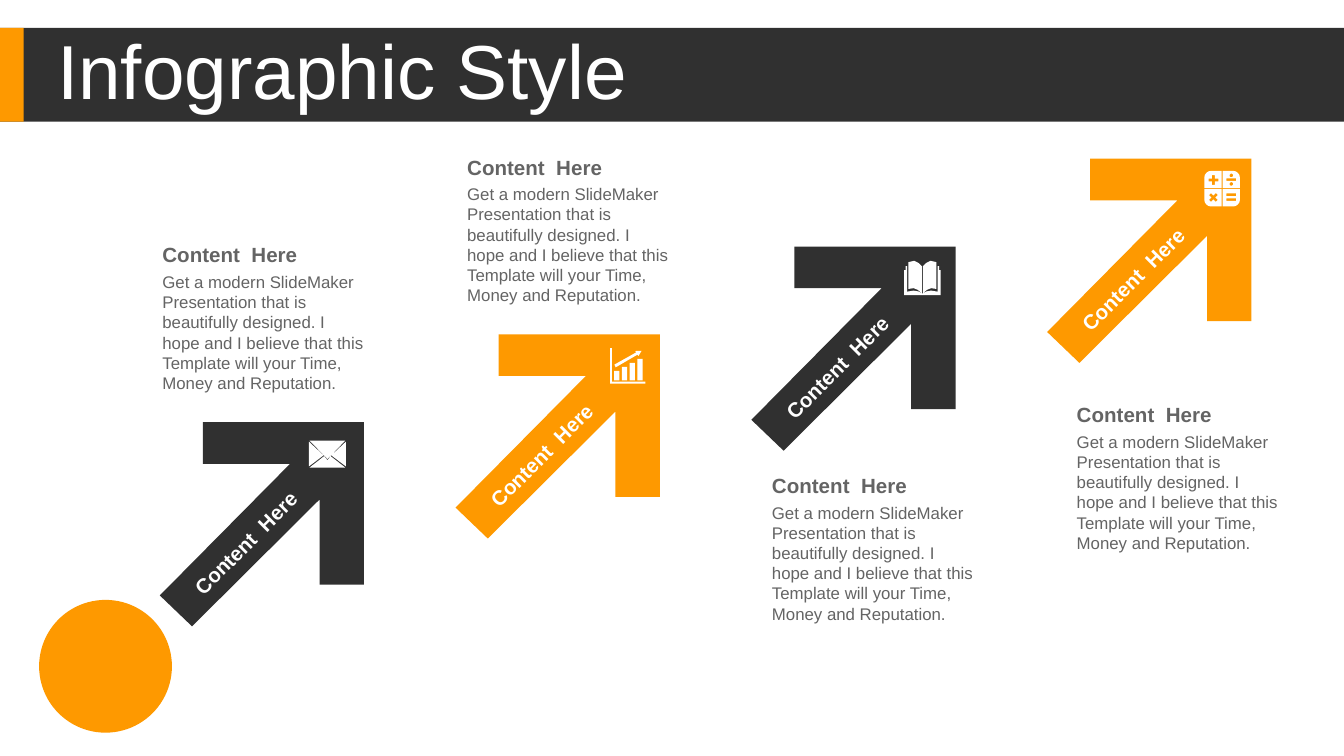
from pptx import Presentation
from pptx import util as u
from pptx.dml import color
from pptx.enum import shapes, text

DARK, ORANGE, WHITE, GREY = "303030", "FE9900", "FFFFFF", "646464"
HEADING = "Content  Here"
BODY = ("Get a modern SlideMaker Presentation that is beautifully designed. "
        "I hope and I believe that this Template will your Time, "
        "Money and Reputation.")

ARROW = [[(32, 0), (152, 0), (152, 121), (119, 121), (119, 57.5),
          (24, 152), (0, 129), (97, 31), (32, 31)]]


def rgb(value):
    return color.RGBColor.from_string(value)


def box(left, top, right, bottom):
    return [(left, top), (right, top), (right, bottom), (left, bottom)]


def mirror(points, width):
    return [(width - x, y) for x, y in points]


def flip(points, height):
    return [(x, height - y) for x, y in points]


def cross(x, y, arm, half):
    return [(x - half, y - arm), (x + half, y - arm), (x + half, y - half),
            (x + arm, y - half), (x + arm, y + half), (x + half, y + half),
            (x + half, y + arm), (x - half, y + arm), (x - half, y + half),
            (x - arm, y + half), (x - arm, y - half), (x - half, y - half)]


def turn(points, x, y):
    return [(x + (a - x - b + y) * 0.7, y + (a - x + b - y) * 0.7)
            for a, b in points]


def dot(x, y):
    return [(x + a, y + b) for a, b in
            [(-1.3, -0.5), (-0.5, -1.3), (0.5, -1.3), (1.3, -0.5),
             (1.3, 0.5), (0.5, 1.3), (-0.5, 1.3), (-1.3, 0.5)]]


def envelope():
    side = [(0, 0.8), (10.8, 11), (0, 19.2)]
    return [[(0.5, 0), (27, 0), (13.75, 13.7)], side, mirror(side, 27.5),
            [(0.5, 20), (11.3, 11.6), (13.75, 14.5), (16.2, 11.6), (27, 20)]]


def bar_chart():
    bars = [box(3 + 5.8 * i, top, 6.9 + 5.8 * i, 24)
            for i, top in enumerate((17, 14, 11, 8))]
    axes = [(0, 0), (1.4, 0), (1.4, 25), (26.2, 25), (26.2, 26.5), (0, 26.5)]
    trend = [(18.8, 2.2), (23.5, 2), (21.2, 5.8), (20.4, 4.9),
             (4.2, 14.3), (3.2, 12.3), (19.3, 3.3)]
    return bars + [axes, trend]


def book():
    page = [(13.1, 4), (10.5, 1.5), (7.5, 0), (3, 1), (3, 21),
            (7, 20.4), (10, 21.6), (13.1, 24)]
    cover = [(2.2, 4), (1, 4), (1, 7), (0, 7), (0, 25.5), (13.5, 25.5),
             (13.5, 24.4), (10.5, 22.8), (7, 22.2), (2.2, 23)]
    return [page, mirror(page, 27), cover, mirror(cover, 27)]


def calculator():
    panel = [(0, 12.9), (0, 5), (0.4, 3), (1.5, 1.5), (3, 0.4),
             (5, 0), (12.9, 0), (12.9, 12.9)]
    right = mirror(panel, 26.5)
    panels = [panel, right, flip(panel, 26.5), flip(right, 26.5)]
    signs = [cross(6.8, 6.8, 3.6, 1.1),
             turn(cross(6.8, 19.8, 3.6, 1.1), 6.8, 19.8),
             box(16.5, 5.6, 23.7, 7.5), dot(20.1, 3.4), dot(20.1, 9.7),
             box(16.5, 16.8, 23.7, 18.8), box(16.5, 20.4, 23.7, 22.4)]
    return panels + signs


def paint(shape, fill):
    shape.shadow.inherit = False
    shape.fill.solid()
    shape.fill.fore_color.rgb = rgb(fill)
    shape.line.fill.background()


def add_preset(slide, kind, left, top, width, height, fill):
    shape = slide.shapes.add_shape(kind, u.Cm(left), u.Cm(top),
                                   u.Cm(width), u.Cm(height))
    paint(shape, fill)


def add_outline(slide, left, top, contours, fill):
    scaled = [[(x * 10, y * 10) for x, y in points] for points in contours]
    builder = slide.shapes.build_freeform(*scaled[0][0], scale=u.Cm(0.00254))
    for index, points in enumerate(scaled):
        if index:
            builder.move_to(*points[0])
        builder.add_line_segments(points[1:], close=True)
    paint(builder.convert_to_shape(u.Cm(left), u.Cm(top)), fill)


def add_text(slide, left, top, width, height, content, size, ink,
             bold=False, middle=True, tight=False, grow=True):
    shape = slide.shapes.add_textbox(u.Cm(left), u.Cm(top),
                                     u.Cm(width), u.Cm(height))
    frame = shape.text_frame
    frame.text = content
    frame.word_wrap = True
    if grow:
        frame.auto_size = text.MSO_AUTO_SIZE.SHAPE_TO_FIT_TEXT
    if middle:
        frame.vertical_anchor = text.MSO_ANCHOR.MIDDLE
    if tight:
        frame.margin_left = frame.margin_right = u.Cm(0.19)
        frame.margin_top = frame.margin_bottom = u.Cm(0.1)
    font = frame.paragraphs[0].runs[0].font
    font.name, font.size, font.bold = "Arial", u.Pt(size), bold
    font.color.rgb = rgb(ink)
    return shape


def add_title(slide):
    rectangle = shapes.MSO_SHAPE.RECTANGLE
    add_preset(slide, rectangle, 0, 0.53, 25.4, 1.77, DARK)
    add_preset(slide, rectangle, 0, 0.53, 0.45, 1.77, ORANGE)
    title = add_text(slide, 0.89, 0.66, 18.47, 1.5, "Infographic Style", 41,
                     WHITE, tight=True, grow=False)
    title.text_frame.paragraphs[0].line_spacing = 0.9


def add_arrow(slide, index, fill):
    right, up = 5.59 * index, 1.66 * index
    add_outline(slide, 3.02 + right, 7.98 - up, ARROW, fill)
    label = add_text(slide, 2.95 + right, 9.93 - up, 3.38, 0.66, HEADING, 11,
                     WHITE, bold=True, tight=True)
    label.rotation = 315
    label.text_frame.paragraphs[0].alignment = text.PP_ALIGN.CENTER


def add_content(slide, index, top):
    left = 2.82 + 5.76 * index
    add_text(slide, left, top, 4.32, 0.73, HEADING, 11, GREY, bold=True)
    add_text(slide, left, top + 0.56, 4.32, 2.56, BODY, 9, GREY, middle=False)


def main():
    presentation = Presentation()
    presentation.slide_width = u.Cm(25.4)
    presentation.slide_height = u.Cm(14.29)
    slide = presentation.slides.add_slide(presentation.slide_layouts[6])
    add_title(slide)
    for index, fill in enumerate((DARK, ORANGE, DARK, ORANGE)):
        add_arrow(slide, index, fill)
    for index, top in enumerate((4.45, 2.79, 8.81, 7.47)):
        add_content(slide, index, top)
    for left, top, icon in ((5.84, 8.33, envelope), (11.53, 6.58, bar_chart),
                            (17.09, 4.93, book), (22.76, 3.23, calculator)):
        add_outline(slide, left, top, icon(), WHITE)
    add_preset(slide, shapes.MSO_SHAPE.OVAL, 0.74, 11.34, 2.51, 2.51, ORANGE)
    presentation.save("out.pptx")


if __name__ == "__main__":
    main()
